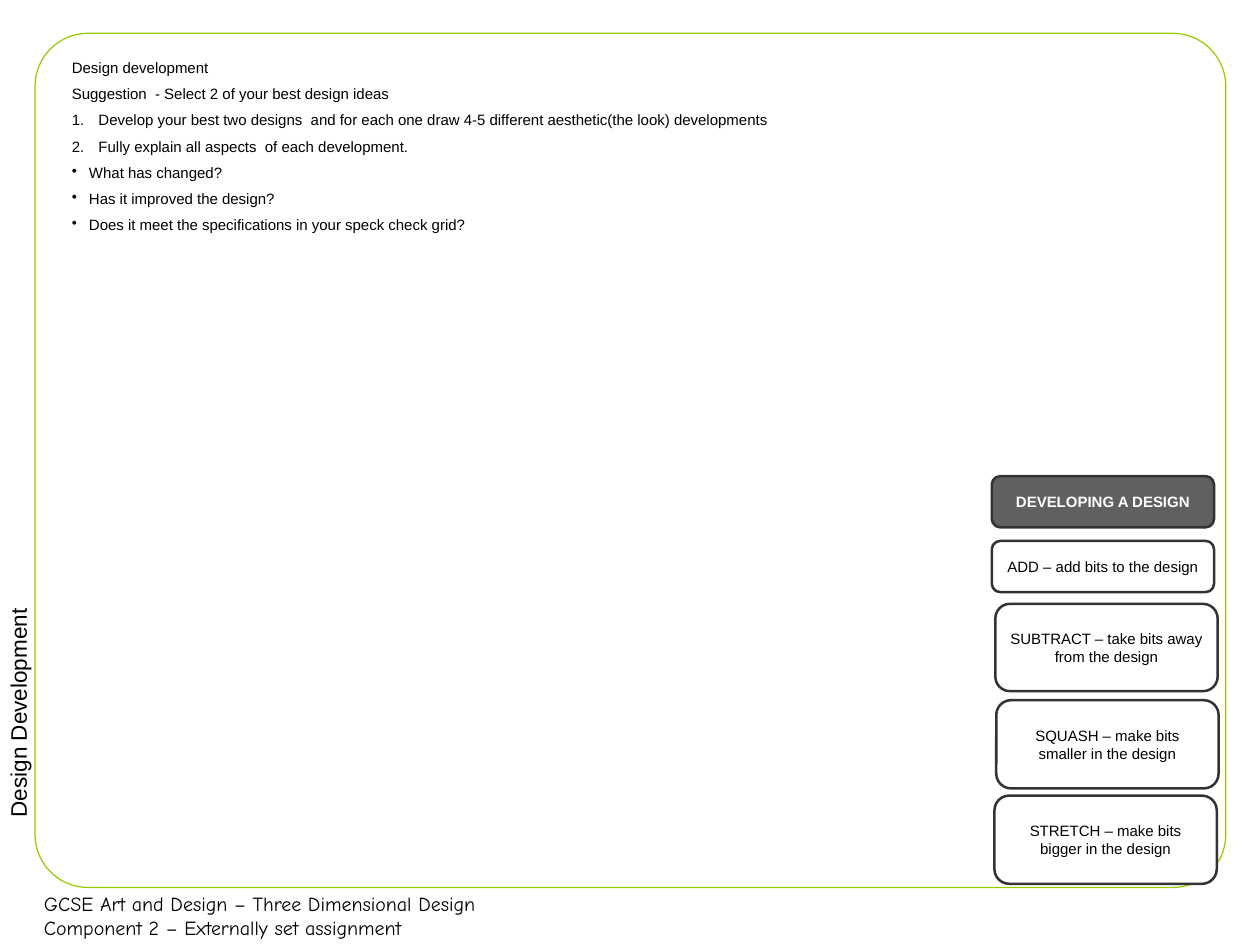
from dataclasses import dataclass

from lxml import etree
from pptx import Presentation
from pptx.dml.color import RGBColor
from pptx.enum.shapes import MSO_SHAPE as Shape
from pptx.enum.text import MSO_ANCHOR as Anchor, MSO_AUTO_SIZE as AutoSize, PP_ALIGN as Align
from pptx.oxml.ns import qn
from pptx.util import Inches, Pt

BLACK, WHITE = "000000", "FFFFFF"
GREEN, GREY, CHARCOAL = "99CC00", "606060", "333333"


@dataclass
class Line:
    text: str
    marker: str = ""  # "1." numbers the line, any other character is a bullet
    indent: float = 0
    before: float = 0


@dataclass
class Card:
    text: str
    left: float
    top: float
    height: float
    fill: str = WHITE
    color: str = BLACK
    bold: bool = False


INSTRUCTIONS = [
    Line("Design development"),
    Line("Suggestion  - Select 2 of your best design ideas", before=6.6),
    *(Line(text, "1.", 0.25, 6.6) for text in (
        " Develop your best two designs  and for each one draw 4-5 different "
        "aesthetic(the look) developments",
        " Fully explain all aspects  of each development.",
    )),
    *(Line(text, "•", 0.19, 6.6) for text in (
        "What has changed?",
        "Has it improved the design?",
        "Does it meet the specifications in your speck check grid?",
    )),
]
FOOTER = [
    Line("GCSE Art and Design – Three Dimensional Design"),
    Line("Component 2 – Externally set assignment"),
]
CARDS = [
    Card("DEVELOPING A DESIGN", 11.02, 5.29, 0.57, GREY, WHITE, True),
    Card("ADD – add bits to the design", 11.02, 6.01, 0.57),
    Card("SUBTRACT – take bits away from the design", 11.06, 6.71, 0.97),
    Card("SQUASH – make bits smaller in the design", 11.07, 7.78, 0.98),
    Card("STRETCH – make bits bigger in the design", 11.05, 8.84, 0.98),
]


def rgb(code: str) -> RGBColor:
    return RGBColor.from_string(code)


def style(para, size: float, color: str = BLACK, name: str = "Arial", bold: bool = False) -> None:
    para.font.size = Pt(size)
    para.font.name = name
    para.font.bold = bold
    para.font.color.rgb = rgb(color)


def add_marker(para, marker: str, indent: float) -> None:
    """Give the paragraph a hanging number or bullet."""
    props = para._p.get_or_add_pPr()
    props.set("marL", str(Inches(indent)))
    props.set("indent", str(-Inches(indent)))
    if marker == "1.":
        bullet = etree.Element(qn("a:buAutoNum"), type="arabicPeriod")
    else:
        bullet = etree.Element(qn("a:buChar"), char=marker)
    props.insert_element_before(bullet, "a:tabLst", "a:defRPr", "a:extLst")


def add_text(page, left: float, top: float, width: float, height: float,
             lines: list[Line], size: float, name: str = "Arial"):
    box = page.shapes.add_textbox(Inches(left), Inches(top), Inches(width), Inches(height))
    frame = box.text_frame
    frame.word_wrap = True
    frame.auto_size = AutoSize.SHAPE_TO_FIT_TEXT
    for index, line in enumerate(lines):
        para = frame.add_paragraph() if index else frame.paragraphs[0]
        para.text = line.text
        para.space_before = Pt(line.before)
        style(para, size, name=name)
        if line.marker:
            add_marker(para, line.marker, line.indent)
    return box


def add_round_box(page, left: float, top: float, width: float, height: float,
                  line: str, weight: float):
    box = page.shapes.add_shape(Shape.ROUNDED_RECTANGLE, Inches(left), Inches(top),
                                Inches(width), Inches(height))
    box.shadow.inherit = False
    box.line.color.rgb = rgb(line)
    box.line.width = Pt(weight)
    return box


def add_card(page, card: Card) -> None:
    box = add_round_box(page, card.left, card.top, 2.47, card.height, CHARCOAL, 2)
    box.fill.solid()
    box.fill.fore_color.rgb = rgb(card.fill)
    frame = box.text_frame
    frame.word_wrap = True
    frame.vertical_anchor = Anchor.MIDDLE
    para = frame.paragraphs[0]
    para.text = card.text
    para.alignment = Align.CENTER
    style(para, 12, card.color, bold=card.bold)


def main() -> None:
    deck = Presentation()
    deck.slide_width, deck.slide_height = Inches(14), Inches(10.5)
    page = deck.slides.add_slide(deck.slide_layouts[6])

    # Page border and footer
    border = add_round_box(page, 0.39, 0.37, 13.23, 9.49, GREEN, 1)
    border.adjustments[0] = 0.062
    border.fill.background()
    add_text(page, 0.39, 9.86, 13.33, 0.64, FOOTER, 16, "Comic Neue")

    # Instructions
    add_text(page, 0.7, 0.6, 12.52, 2.12, INSTRUCTIONS, 12)

    # Ways of developing a design
    for card in CARDS:
        add_card(page, card)

    # Section title up the left edge
    title = add_text(page, -4.09, 4.69, 8.58, 0.4, [Line("Design Development")], 18)
    title.rotation = 270

    deck.save("out.pptx")


if __name__ == "__main__":
    main()
